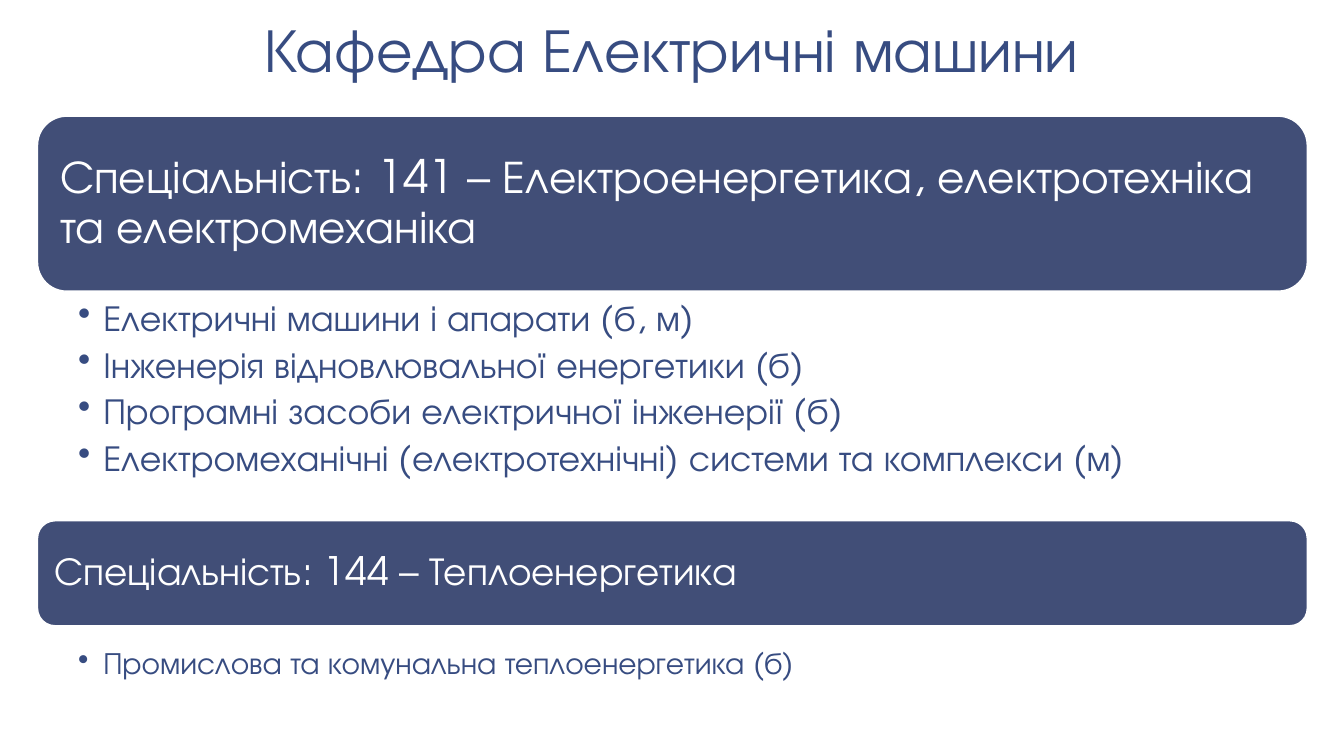
"""Builds the slide on the specialities of the Electrical Machines department."""
from lxml import etree
from pptx import Presentation
from pptx.dml.color import RGBColor
from pptx.enum.shapes import MSO_SHAPE
from pptx.enum.text import MSO_ANCHOR, MSO_AUTO_SIZE, PP_ALIGN
from pptx.oxml.ns import qn
from pptx.util import Pt

ROUNDED = MSO_SHAPE.ROUNDED_RECTANGLE
TOP, MIDDLE, BOTTOM = MSO_ANCHOR.TOP, MSO_ANCHOR.MIDDLE, MSO_ANCHOR.BOTTOM
LEFT, CENTER = PP_ALIGN.LEFT, PP_ALIGN.CENTER
NO_FIT = MSO_AUTO_SIZE.NONE
TITLE_ONLY = 5

FONT = "TeX Gyre Adventor"
COLORS = {"panel": "414E77", "text": "374C81", "white": "FFFFFF"}
SLIDE_WIDTH, SLIDE_HEIGHT = 960, 540
BLOCK_LEFT, BLOCK_WIDTH = 26.8, 907
BULLET_INDENT = 18

SPECIALITIES = [
    {
        "heading": "Спеціальність: 141 – Електроенергетика, електротехніка та електромеханіка",
        "panel": (83, 125), "heading_size": 33, "inset": 10,
        "programmes": [
            "Електричні машини і апарати (б, м)",
            "Інженерія відновлювальної енергетики (б)",
            "Програмні засоби електричної інженерії (б)",
            "Електромеханічні (електротехнічні) системи та комплекси (м)",
        ],
        "list": (211, 160.5), "list_size": 26, "list_insets": (29, 3.5, 18.5, 3.5),
    },
    {
        "heading": "Спеціальність: 144 – Теплоенергетика",
        "panel": (372, 75), "heading_size": 28, "inset": 8.5,
        "programmes": ["Промислова та комунальна теплоенергетика (б)"],
        "list": (460, 31), "list_size": 22, "list_insets": (29, 3, 16, 3),
    },
]


def set_attributes(target, values):
    for name, value in values.items():
        setattr(target, name, value)


class SlideBuilder:
    """Holds the deck style and the current slide."""

    def __init__(self, deck):
        set_attributes(deck, {"slide_width": Pt(SLIDE_WIDTH), "slide_height": Pt(SLIDE_HEIGHT)})
        self.slide = deck.slides.add_slide(deck.slide_layouts[TITLE_ONLY])
        fill = self.slide.background.fill
        fill.solid()
        fill.fore_color.rgb = self.color("white")

    def color(self, name):
        return RGBColor.from_string(COLORS[name])

    def fill_text(self, box, lines, size, color, insets, anchor,
                  align=LEFT, spacing=0.9, after=0, bullet=False):
        frame = box.text_frame
        left, top, right, bottom = map(Pt, insets)
        set_attributes(frame, {
            "word_wrap": True, "auto_size": NO_FIT, "vertical_anchor": anchor,
            "margin_left": left, "margin_top": top,
            "margin_right": right, "margin_bottom": bottom,
        })
        for index, line in enumerate(lines):
            para = frame.add_paragraph() if index else frame.paragraphs[0]
            if bullet:
                self.add_bullet(para)
            set_attributes(para, {"alignment": align, "line_spacing": spacing,
                                  "space_before": Pt(0), "space_after": Pt(after)})
            span = para.add_run()
            span.text = line
            set_attributes(span.font, {"name": FONT, "size": Pt(size)})
            span.font.color.rgb = self.color(color)

    def add_bullet(self, para):
        properties = para._p.get_or_add_pPr()
        properties.set("marL", str(Pt(BULLET_INDENT)))
        properties.set("indent", str(-Pt(BULLET_INDENT)))
        etree.SubElement(properties, qn("a:buChar")).set("char", "•")

    def title(self, text):
        box = self.slide.shapes.title
        set_attributes(box, {"left": Pt(0), "top": Pt(6),
                             "width": Pt(SLIDE_WIDTH), "height": Pt(59.5)})
        self.fill_text(box, [text], 44, "text", (9.5, 5, 9.5, 5), BOTTOM, CENTER, 0.85)

    def panel(self, text, top, height, size, inset):
        box = self.slide.shapes.add_shape(
            ROUNDED, Pt(BLOCK_LEFT), Pt(top), Pt(BLOCK_WIDTH), Pt(height))
        box.shadow.inherit = False
        box.fill.solid()
        box.fill.fore_color.rgb = self.color("panel")
        box.line.color.rgb = self.color("white")
        box.line.width = Pt(1)
        self.fill_text(box, [text], size, "white", (inset,) * 4, MIDDLE)

    def bullet_list(self, lines, top, height, size, insets):
        box = self.slide.shapes.add_textbox(
            Pt(BLOCK_LEFT), Pt(top), Pt(BLOCK_WIDTH), Pt(height))
        self.fill_text(box, lines, size, "text", insets, TOP, after=size * 0.2, bullet=True)


def main():
    deck = Presentation()
    builder = SlideBuilder(deck)
    builder.title("Кафедра Електричні машини")
    for item in SPECIALITIES:
        builder.panel(item["heading"], *item["panel"], item["heading_size"], item["inset"])
        builder.bullet_list(item["programmes"], *item["list"],
                            item["list_size"], item["list_insets"])
    deck.save("out.pptx")


if __name__ == "__main__":
    main()
